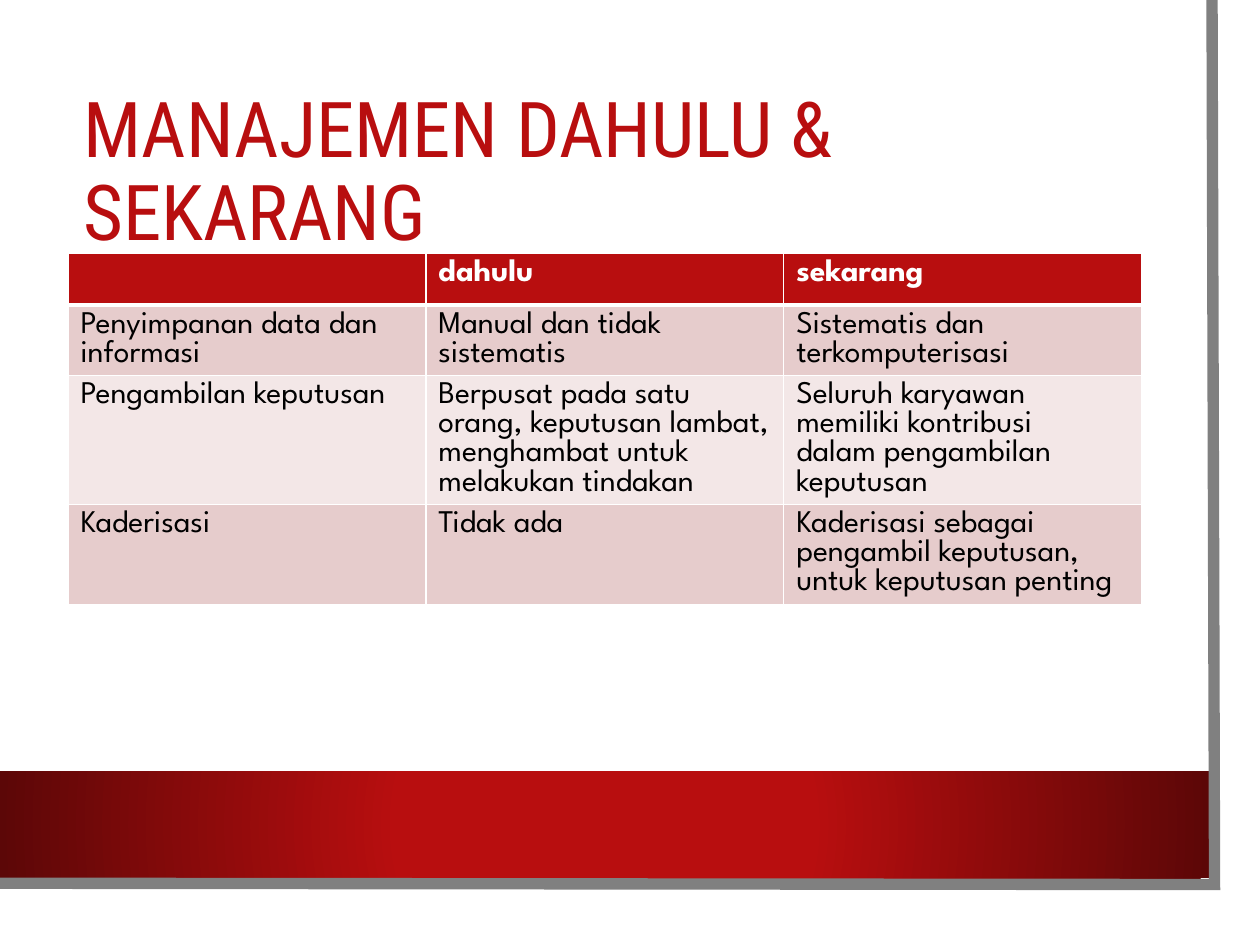
from dataclasses import dataclass

from lxml.etree import SubElement
from pptx import Presentation
from pptx.dml.color import RGBColor
from pptx.enum.shapes import MSO_SHAPE
from pptx.enum.text import MSO_ANCHOR, MSO_AUTO_SIZE, PP_ALIGN
from pptx.oxml import parse_xml
from pptx.oxml.ns import nsdecls, qn
from pptx.util import Inches, Pt


@dataclass(frozen=True)
class Theme:
    red: str = "B80E0F"
    dark_red: str = "5C0707"
    gray: str = "808080"
    white: str = "FFFFFF"
    black: str = "000000"
    bands: tuple = ("E6CCCC", "F3E7E7")
    title_font: str = "Roboto Condensed"
    body_font: str = "League Spartan"
    title_size: int = 44
    body_size: int = 18


THEME = Theme()

TITLE = "MANAJEMEN DAHULU & SEKARANG"
ROWS = [
    ["", "dahulu", "sekarang"],
    ["Penyimpanan data dan informasi", "Manual dan tidak sistematis",
     "Sistematis dan terkomputerisasi"],
    ["Pengambilan keputusan",
     "Berpusat pada satu orang, keputusan lambat, menghambat untuk melakukan tindakan",
     "Seluruh karyawan memiliki kontribusi\ndalam pengambilan keputusan"],
    ["Kaderisasi", "Tidak ada",
     "Kaderisasi sebagai pengambil keputusan, untuk keputusan penting"],
]
ROW_HEIGHTS = [0.41, 0.41, 0.8, 0.8]
COLUMN_WIDTH = 2.84


def write_text(tf, text, *, font, size, color, bold=False, line_spacing=None):
    """Write one paragraph for each line of text."""
    for i, line in enumerate(text.split("\n")):
        p = tf.paragraphs[0] if i == 0 else tf.add_paragraph()
        p.alignment = PP_ALIGN.LEFT
        p.line_spacing = line_spacing
        p.font.size = Pt(size)
        if line:
            r = p.add_run()
            r.text = line
            r.font.name = font
            r.font.size = Pt(size)
            r.font.bold = bold
            r.font.color.rgb = RGBColor.from_string(color)


def add_panel(slide, left, top, width, height, color):
    sp = slide.shapes.add_shape(MSO_SHAPE.RECTANGLE, Inches(left), Inches(top),
                                Inches(width), Inches(height))
    sp.shadow.inherit = False
    sp.fill.solid()
    sp.fill.fore_color.rgb = RGBColor.from_string(color)
    sp.line.fill.background()
    return sp


def fill_radial(sp, inner, outer, start):
    """Fade from the centre of the shape, keeping inner up to start percent."""
    solid = sp._element.spPr.find(qn("a:solidFill"))
    gradient = parse_xml(
        f'<a:gradFill {nsdecls("a")} rotWithShape="1"><a:gsLst>'
        f'<a:gs pos="{start * 1000}"><a:srgbClr val="{inner}"/></a:gs>'
        f'<a:gs pos="100000"><a:srgbClr val="{outer}"/></a:gs></a:gsLst>'
        '<a:path path="circle">'
        '<a:fillToRect l="50000" t="50000" r="50000" b="50000"/>'
        '</a:path></a:gradFill>')
    solid.getparent().replace(solid, gradient)


def add_page_edge(slide):
    (x, y), *others = [(9.62, 0), (9.64, 7.02), (-0.02, 7.01)]
    builder = slide.shapes.build_freeform(Inches(x), Inches(y))
    builder.add_line_segments([(Inches(a), Inches(b)) for a, b in others],
                              close=False)
    sp = builder.convert_to_shape()
    sp.shadow.inherit = False
    sp.fill.background()
    sp.line.color.rgb = RGBColor.from_string(THEME.gray)
    sp.line.width = Pt(6.5)
    SubElement(sp.line._get_or_add_ln(), qn("a:miter"), lim="800000")


def place_title(slide):
    title = slide.shapes.title
    title.left, title.top = Inches(0.56), Inches(0.75)
    title.width, title.height = Inches(8.53), Inches(1.26)
    tf = title.text_frame
    tf.word_wrap = True
    tf.auto_size = MSO_AUTO_SIZE.NONE
    tf.vertical_anchor = MSO_ANCHOR.MIDDLE
    write_text(tf, TITLE, font=THEME.title_font, size=THEME.title_size,
               color=THEME.red, line_spacing=0.9)
    # Bring the title in front of the background panels
    slide.shapes._spTree.append(title._element)


def set_borders(cell, **widths):
    """Draw white borders; each side (L, R, T, B) has its width in points."""
    tcPr = cell._tc.get_or_add_tcPr()
    for i, (side, width) in enumerate(widths.items()):
        tcPr.insert(i, parse_xml(
            f'<a:ln{side} {nsdecls("a")} w="{Pt(width)}"><a:solidFill>'
            f'<a:srgbClr val="{THEME.white}"/></a:solidFill></a:ln{side}>'))


def add_comparison_table(slide):
    columns = len(ROWS[0])
    table = slide.shapes.add_table(
        len(ROWS), columns, Inches(0.54), Inches(2.01),
        Inches(COLUMN_WIDTH * columns), Inches(sum(ROW_HEIGHTS))).table
    for column in table.columns:
        column.width = Inches(COLUMN_WIDTH)
    for i, (row, height, texts) in enumerate(zip(table.rows, ROW_HEIGHTS, ROWS)):
        row.height = Inches(height)
        header = i == 0
        fill = THEME.red if header else THEME.bands[(i - 1) % 2]
        for cell, text in zip(row.cells, texts):
            cell.fill.solid()
            cell.fill.fore_color.rgb = RGBColor.from_string(fill)
            set_borders(cell, L=1, R=1, T=3 if i == 1 else 1, B=3 if header else 1)
            write_text(cell.text_frame, text, font=THEME.body_font,
                       size=THEME.body_size, bold=header,
                       color=THEME.white if header else THEME.black)


def main():
    prs = Presentation()
    prs.slide_width, prs.slide_height = Inches(10), Inches(7.5)
    slide = prs.slides.add_slide(prs.slide_layouts[5])
    add_panel(slide, 0, 0, 9.83, 7.27, THEME.white)
    band = add_panel(slide, 0, 6.12, 9.6, 0.85, THEME.red)
    fill_radial(band, THEME.red, THEME.dark_red, 34)
    add_page_edge(slide)
    place_title(slide)
    add_comparison_table(slide)
    prs.save("out.pptx")


if __name__ == "__main__":
    main()
